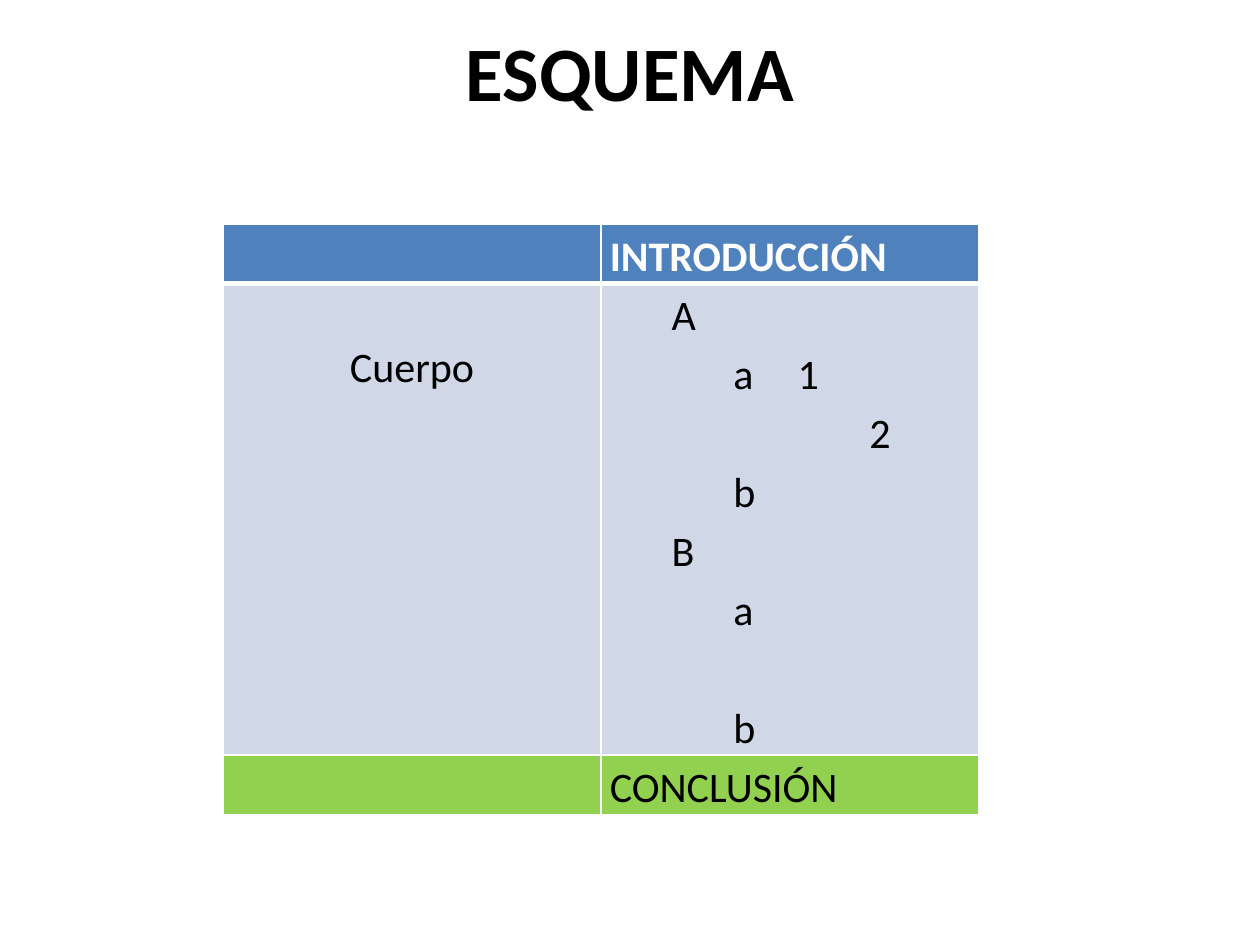
from lxml import etree
from pptx import Presentation
from pptx.dml.color import RGBColor
from pptx.enum.text import MSO_ANCHOR, PP_ALIGN
from pptx.oxml.ns import qn
from pptx.util import Inches, Pt

CENTER = PP_ALIGN.CENTER
LEFT = PP_ALIGN.LEFT
MIDDLE = MSO_ANCHOR.MIDDLE

FONT = "Calibri"
BLACK, WHITE = "000000", "FFFFFF"
BLUE, PALE, GREEN = "4F81BD", "D0D8E8", "92D050"
STEP = 0.49  # outline indent per level, inches
ROW_FILLS = (BLUE, PALE, GREEN)
ROW_HEIGHTS = (0.47, 3.74, 0.47)

# text, left margin, first-line indent, space before in points
OUTLINE = (
    ("A", STEP, 0, 0),
    ("a\t1", STEP, STEP, 0),
    ("2", 2.06, 0, 0),
    ("b", STEP, STEP, 0),
    ("B", STEP, 0, 0),
    ("a", STEP, STEP, 0),
    ("b", STEP, STEP, 34),
)


def color(value):
    return RGBColor.from_string(value)


def add_run(paragraph, text, size, font_color=BLACK, bold=False):
    run = paragraph.add_run()
    run.text = text
    run.font.name = FONT
    run.font.size = Pt(size)
    run.font.bold = bold
    run.font.color.rgb = color(font_color)


def add_title(slide, text):
    title = slide.shapes.title
    title.left, title.top = Inches(0.5), Inches(0.3)
    title.width, title.height = Inches(9), Inches(1.25)
    title.text_frame.vertical_anchor = MIDDLE
    paragraph = title.text_frame.paragraphs[0]
    paragraph.alignment = CENTER
    add_run(paragraph, text, 44, bold=True)
    paragraph.add_line_break()


def set_border(cell, side, width):
    line = etree.SubElement(cell._tc.get_or_add_tcPr(), qn(f"a:ln{side}"), w=str(Pt(width)))
    fill = etree.SubElement(line, qn("a:solidFill"))
    etree.SubElement(fill, qn("a:srgbClr"), val=WHITE)


def format_cell(cell, row, fill):
    # The header is set off by a thicker rule
    widths = {"L": 1, "R": 1, "T": 3 if row == 1 else 1, "B": 3 if row == 0 else 1}
    for side, width in widths.items():
        set_border(cell, side, width)
    cell.fill.solid()
    cell.fill.fore_color.rgb = color(fill)
    cell.margin_left = cell.margin_right = Inches(0.07)
    cell.margin_top = cell.margin_bottom = 0


def write_line(paragraph, text, alignment=LEFT, font_color=BLACK, bold=False):
    paragraph.alignment = alignment
    paragraph.line_spacing = 1.15
    add_run(paragraph, text, 24, font_color, bold)


def write_outline(cell):
    frame = cell.text_frame
    for index, (text, margin, indent, before) in enumerate(OUTLINE):
        paragraph = frame.add_paragraph() if index else frame.paragraphs[0]
        write_line(paragraph, text)
        paragraph.space_before = Pt(before)
        properties = paragraph._p.get_or_add_pPr()
        properties.set("marL", str(Inches(margin)))
        properties.set("indent", str(Inches(indent)))


def add_outline_table(slide):
    frame = slide.shapes.add_table(
        3, 2, Inches(1.77), Inches(1.78), Inches(6), Inches(sum(ROW_HEIGHTS)))
    table = frame.table
    for row, (height, fill) in enumerate(zip(ROW_HEIGHTS, ROW_FILLS)):
        table.rows[row].height = Inches(height)
        for cell in table.rows[row].cells:
            format_cell(cell, row, fill)

    # Section names
    write_line(table.cell(0, 1).text_frame.paragraphs[0], "INTRODUCCIÓN",
               font_color=WHITE, bold=True)
    body = table.cell(1, 0)
    body.margin_top = Inches(0.41)
    write_line(body.text_frame.paragraphs[0], "Cuerpo", CENTER)
    write_line(table.cell(2, 1).text_frame.paragraphs[0], "CONCLUSIÓN")

    # Nested points of the body
    write_outline(table.cell(1, 1))


def main():
    presentation = Presentation()
    presentation.slide_width, presentation.slide_height = Inches(10), Inches(7.5)
    slide = presentation.slides.add_slide(presentation.slide_layouts[5])
    add_title(slide, "ESQUEMA")
    add_outline_table(slide)
    presentation.save("out.pptx")


if __name__ == "__main__":
    main()
